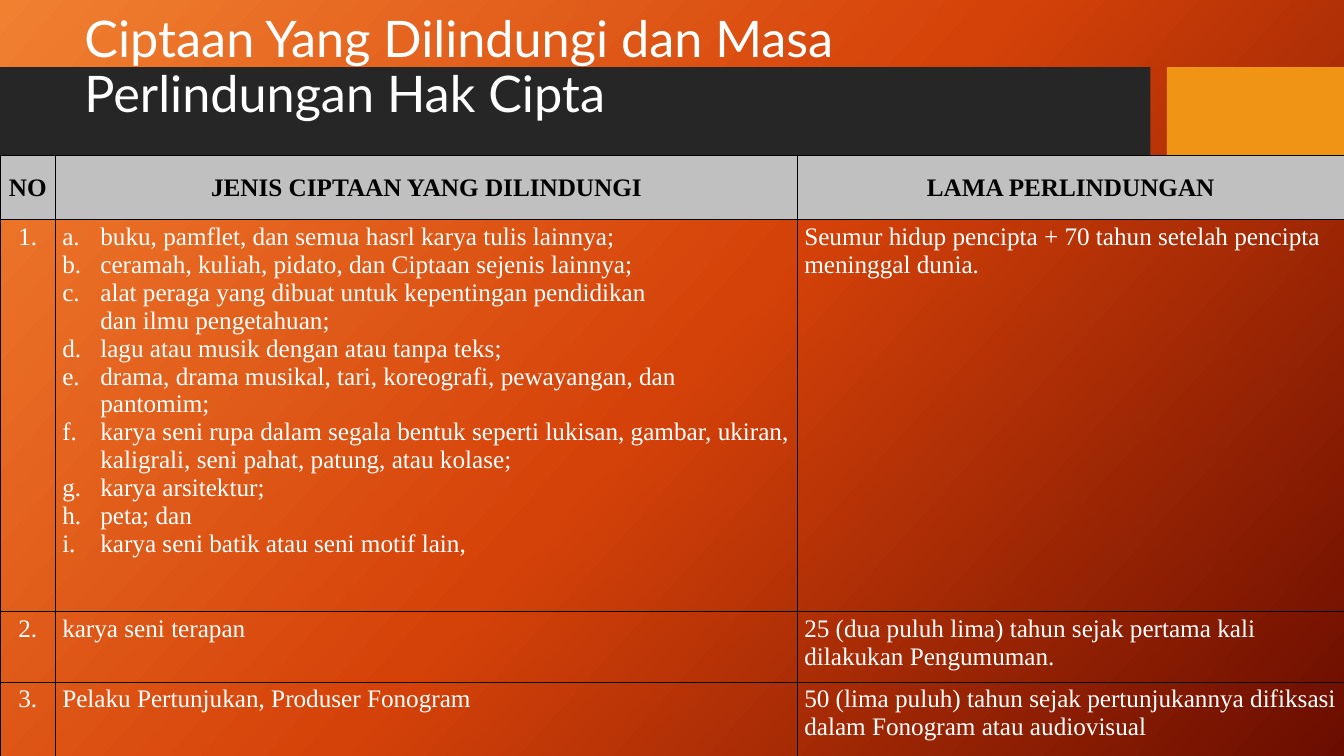
from lxml import etree
from pptx import Presentation
from pptx.dml.color import RGBColor
from pptx.enum.shapes import MSO_SHAPE
from pptx.enum.text import MSO_ANCHOR, PP_ALIGN
from pptx.oxml.ns import qn
from pptx.util import Cm, Pt

RECT = MSO_SHAPE.RECTANGLE
CENTER, LEFT = PP_ALIGN.CENTER, PP_ALIGN.LEFT
TOP, MIDDLE = MSO_ANCHOR.TOP, MSO_ANCHOR.MIDDLE


class Theme:
    title_font, table_font = "Lato", "Times New Roman"
    title_size, table_size = 36, 18
    light, dark = "FFFFFF", "000000"
    band, accent, header = "262626", "F09415", "C0C0C0"
    border, border_width = "000000", 0.75
    gradient = [(0, "F18031"), (50, "D54209"), (100, "6A0D00")]
    gradient_angle = 42
    cell_margin_x, cell_margin_y = 0.17, 0.08
    list_indent = 0.96


class SlideBuilder:
    def __init__(self, prs, theme):
        self.theme = theme
        self.s = prs.slides.add_slide(prs.slide_layouts[6])

    def background(self):
        fill = self.s.background.fill
        fill.gradient()
        fill.gradient_angle = 360 - self.theme.gradient_angle
        stops = next(self.s.element.iter(qn("a:gsLst")))
        for stop in list(stops):
            stops.remove(stop)
        for position, color in self.theme.gradient:
            stop = etree.SubElement(stops, qn("a:gs"), pos=str(position * 1000))
            etree.SubElement(stop, qn("a:srgbClr"), val=color)

    def rect(self, x, y, w, h, color):
        sp = self.s.shapes.add_shape(RECT, Cm(x), Cm(y), Cm(w), Cm(h))
        sp.shadow.inherit = False
        sp.fill.solid()
        sp.fill.fore_color.rgb = RGBColor.from_string(color)
        sp.line.fill.background()

    def run(self, p, text, font, size, color, bold=False):
        r = p.add_run()
        r.text = text
        r.font.name, r.font.size, r.font.bold = font, Pt(size), bold
        r.font.color.rgb = RGBColor.from_string(color)

    def title(self, x, y, w, h, text):
        t = self.theme
        tf = self.s.shapes.add_textbox(Cm(x), Cm(y), Cm(w), Cm(h)).text_frame
        tf.word_wrap = True
        tf.vertical_anchor = MIDDLE
        p = tf.paragraphs[0]
        p.line_spacing = 0.9
        self.run(p, text, t.title_font, t.title_size, t.light)

    def letter_list(self, p):
        indent = Cm(self.theme.list_indent)
        pPr = p._p.get_or_add_pPr()
        pPr.set("marL", str(indent))
        pPr.set("indent", str(-indent))
        etree.SubElement(pPr, qn("a:buFont"), typeface="+mj-lt")
        etree.SubElement(pPr, qn("a:buAutoNum"), type="alphaLcPeriod")

    def borders(self, cell):
        tcPr = cell._tc.get_or_add_tcPr()
        for i, side in enumerate(("lnL", "lnR", "lnT", "lnB")):
            ln = etree.Element(qn("a:" + side), w=str(Pt(self.theme.border_width)))
            fill = etree.SubElement(ln, qn("a:solidFill"))
            etree.SubElement(fill, qn("a:srgbClr"), val=self.theme.border)
            tcPr.insert(i, ln)

    def cell(self, cell, content, header, align):
        t = self.theme
        cell.margin_left = cell.margin_right = Cm(t.cell_margin_x)
        cell.margin_top = cell.margin_bottom = Cm(t.cell_margin_y)
        cell.vertical_anchor = MIDDLE if header else TOP
        if header:
            cell.fill.solid()
            cell.fill.fore_color.rgb = RGBColor.from_string(t.header)
        else:
            cell.fill.background()
        self.borders(cell)

        # A list of strings becomes a lettered list
        lettered = isinstance(content, list)
        tf = cell.text_frame
        for i, text in enumerate(content if lettered else [content]):
            p = tf.add_paragraph() if i else tf.paragraphs[0]
            p.alignment = align
            if lettered:
                self.letter_list(p)
            for j, line in enumerate(text.split("\n")):
                if j:
                    p.add_line_break()
                self.run(p, line, t.table_font, t.table_size,
                         t.dark if header else t.light, header)

    def table(self, x, y, widths, heights, rows):
        table = self.s.shapes.add_table(
            len(rows), len(widths), Cm(x), Cm(y),
            Cm(sum(widths)), Cm(sum(heights))).table
        table.first_row = table.horz_banding = False
        for column, width in zip(table.columns, widths):
            column.width = Cm(width)
        for i, (height, row) in enumerate(zip(heights, rows)):
            table.rows[i].height = Cm(height)
            for j, content in enumerate(row):
                align = CENTER if i == 0 or j == 0 else LEFT
                self.cell(table.cell(i, j), content, i == 0, align)


PROTECTED_WORKS = [
    "buku, pamflet, dan semua hasrl karya tulis lainnya;",
    "ceramah, kuliah, pidato, dan Ciptaan sejenis lainnya;",
    "alat peraga yang dibuat untuk kepentingan pendidikan\ndan ilmu pengetahuan;",
    "lagu atau musik dengan atau tanpa teks;",
    "drama, drama musikal, tari, koreografi, pewayangan, dan pantomim;",
    "karya seni rupa dalam segala bentuk seperti lukisan, gambar, ukiran, "
    "kaligrali, seni pahat, patung, atau kolase;",
    "karya arsitektur;",
    "peta; dan",
    "karya seni batik atau seni motif lain,",
]

ROWS = [
    ("NO", "JENIS CIPTAAN YANG DILINDUNGI", "LAMA PERLINDUNGAN"),
    ("1.", PROTECTED_WORKS,
     "Seumur hidup pencipta + 70 tahun setelah pencipta meninggal dunia."),
    ("2.", "karya seni terapan",
     "25 (dua puluh lima) tahun sejak pertama kali dilakukan Pengumuman."),
    ("3.", "Pelaku Pertunjukan, Produser Fonogram",
     "50 (lima puluh) tahun sejak pertunjukannya difiksasi "
     "dalam Fonogram atau audiovisual"),
]


def main():
    prs = Presentation()
    prs.slide_width, prs.slide_height = Cm(33.87), Cm(19.05)
    theme = Theme()
    slide = SlideBuilder(prs, theme)

    # Background and title band
    slide.background()
    slide.rect(0, 1.69, 28.99, 3.81, theme.band)
    slide.rect(29.41, 1.69, 4.46, 3.81, theme.accent)
    slide.title(1.88, 0.23, 26.7, 3,
                "Ciptaan Yang Dilindungi dan Masa Perlindungan Hak Cipta")

    # Protection periods
    slide.table(0, 3.91, [1.4, 18.7, 13.77], [1.63, 9.87, 1.78, 1.9], ROWS)

    prs.save("out.pptx")


if __name__ == "__main__":
    main()
